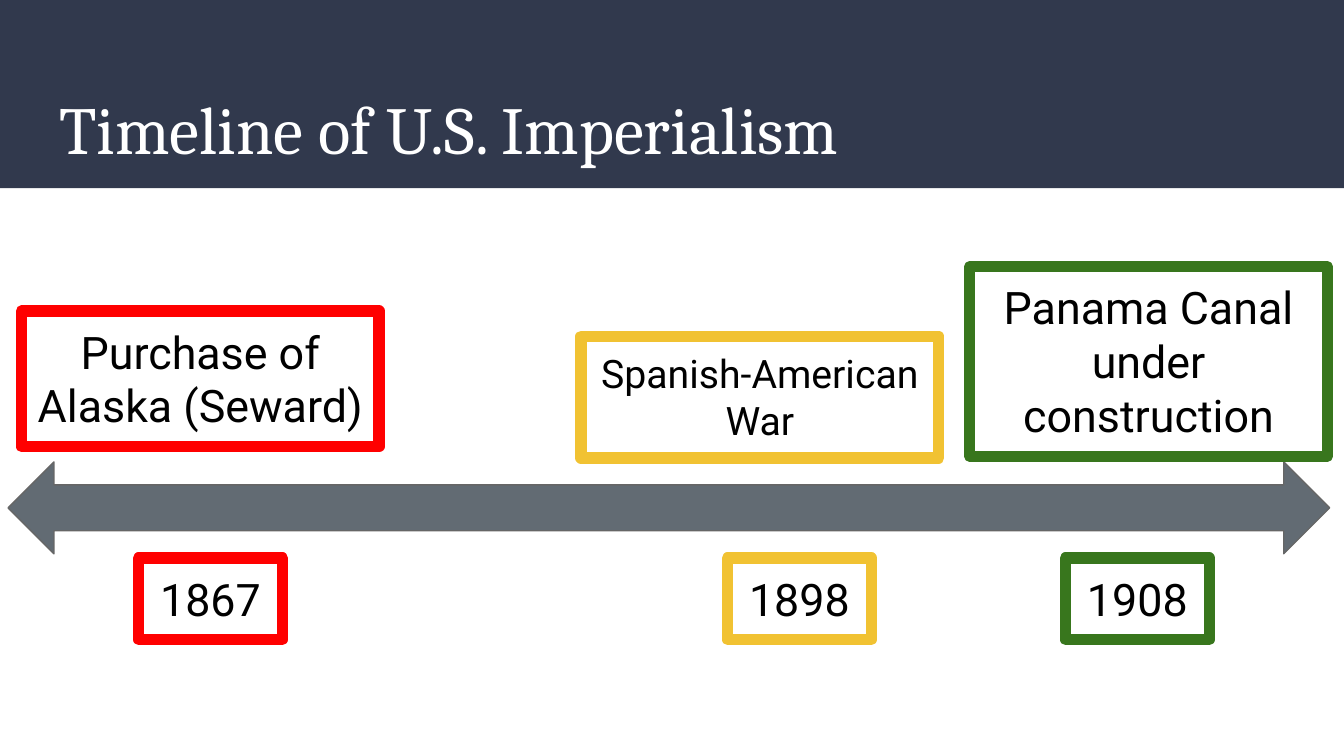
from pptx import Presentation
from pptx.dml.color import RGBColor
from pptx.enum.shapes import MSO_SHAPE
from pptx.enum.text import MSO_ANCHOR, MSO_AUTO_SIZE, PP_ALIGN
from pptx.oxml.ns import qn
from pptx.util import Pt
from lxml.etree import SubElement

NAVY = RGBColor(0x31, 0x39, 0x4D)
SLATE = RGBColor(0x62, 0x6B, 0x73)
GRAY = RGBColor(0x66, 0x66, 0x66)
WHITE = RGBColor(0xFF, 0xFF, 0xFF)
BLACK = RGBColor(0, 0, 0)
RED = RGBColor(0xFF, 0, 0)
GOLD = RGBColor(0xF1, 0xC2, 0x32)
GREEN = RGBColor(0x38, 0x76, 0x1D)

# Content: year, event, colour, year left, event left, top and height, event text size
TITLE = "Timeline of U.S. Imperialism"
EVENTS = [
    ("1867", "Purchase of Alaska (Seward)", RED, 74.3, 11.5, 166.6, 72.7, 24),
    ("1898", "Spanish-American War", GOLD, 389.8, 311.3, 180.2, 65.2, 21),
    ("1908", "Panama Canal under construction", GREEN, 570.8, 519.5, 142.9, 101.5, 24),
]
YEAR_TOP, YEAR_WIDTH, YEAR_HEIGHT = 299, 77, 43.7
EVENT_WIDTH = 191.6
INSET = 7.2


def write_text(shape, text, size, font="Roboto", color=BLACK,
               align=PP_ALIGN.CENTER, anchor=MSO_ANCHOR.TOP,
               auto_size=MSO_AUTO_SIZE.SHAPE_TO_FIT_TEXT):
    frame = shape.text_frame
    frame.word_wrap = True
    frame.auto_size = auto_size
    frame.vertical_anchor = anchor
    frame.margin_left = frame.margin_right = Pt(INSET)
    frame.margin_top = frame.margin_bottom = Pt(INSET)
    paragraph = frame.paragraphs[0]
    paragraph.alignment = align
    run = paragraph.add_run()
    run.text = text
    run.font.name = font
    run.font.size = Pt(size)
    run.font.color.rgb = color


def add_shape(slide, kind, left, top, width, height, fill=None, line=None, line_width=0.75):
    shape = slide.shapes.add_shape(kind, Pt(left), Pt(top), Pt(width), Pt(height))
    shape.shadow.inherit = False
    if fill is None:
        shape.fill.background()
    else:
        shape.fill.solid()
        shape.fill.fore_color.rgb = fill
    if line is None:
        shape.line.fill.background()
    else:
        shape.line.color.rgb = line
        shape.line.width = Pt(line_width)
        SubElement(shape.line._get_or_add_ln(), qn("a:round"))
    return shape


def add_label(slide, text, color, left, top, width, height, size=24):
    box = add_shape(slide, MSO_SHAPE.RECTANGLE, left, top, width, height,
                    line=color, line_width=6)
    write_text(box, text, size)


def main():
    presentation = Presentation()
    presentation.slide_width, presentation.slide_height = Pt(720), Pt(405)
    slide = presentation.slides.add_slide(presentation.slide_layouts[5])

    # Header band behind the title
    band = add_shape(slide, MSO_SHAPE.RECTANGLE, 0, 0, 720, 100.8, fill=NAVY)
    title = slide.shapes.title
    title._element.addprevious(band._element)
    title.left, title.top, title.width, title.height = Pt(24.5), Pt(39.6), Pt(671), Pt(49)
    write_text(title, TITLE, 36, font="Cambria", color=WHITE, align=PP_ALIGN.LEFT,
               auto_size=MSO_AUTO_SIZE.NONE)

    # Time axis
    add_shape(slide, MSO_SHAPE.LEFT_RIGHT_ARROW, 4.3, 247.5, 708, 49.2,
              fill=SLATE, line=GRAY)

    # Years below the axis, events above it
    for year, event, color, year_left, event_left, event_top, event_height, size in EVENTS:
        add_label(slide, year, color, year_left, YEAR_TOP, YEAR_WIDTH, YEAR_HEIGHT)
        add_label(slide, event, color, event_left, event_top, EVENT_WIDTH, event_height, size)

    presentation.save("out.pptx")


if __name__ == "__main__":
    main()
